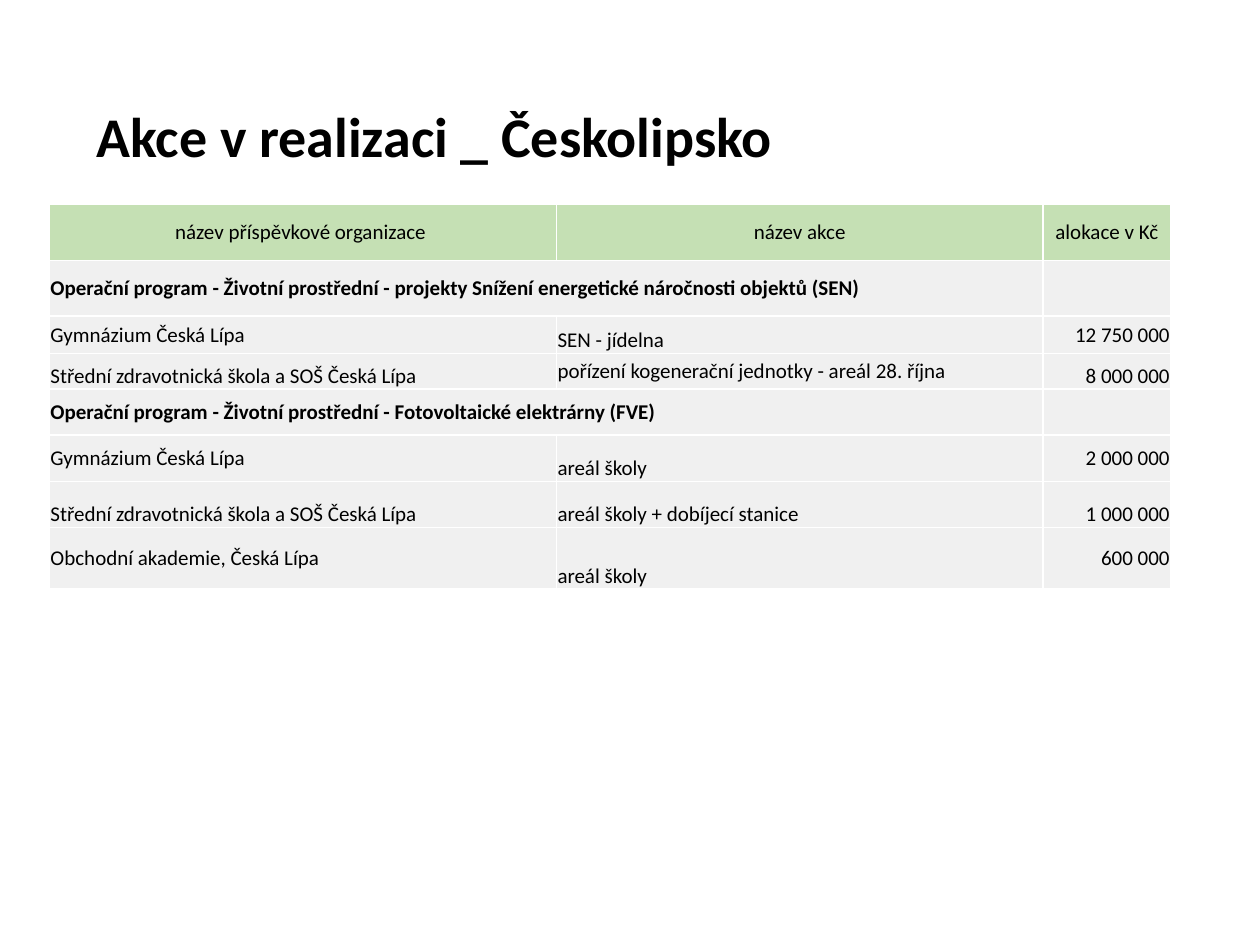
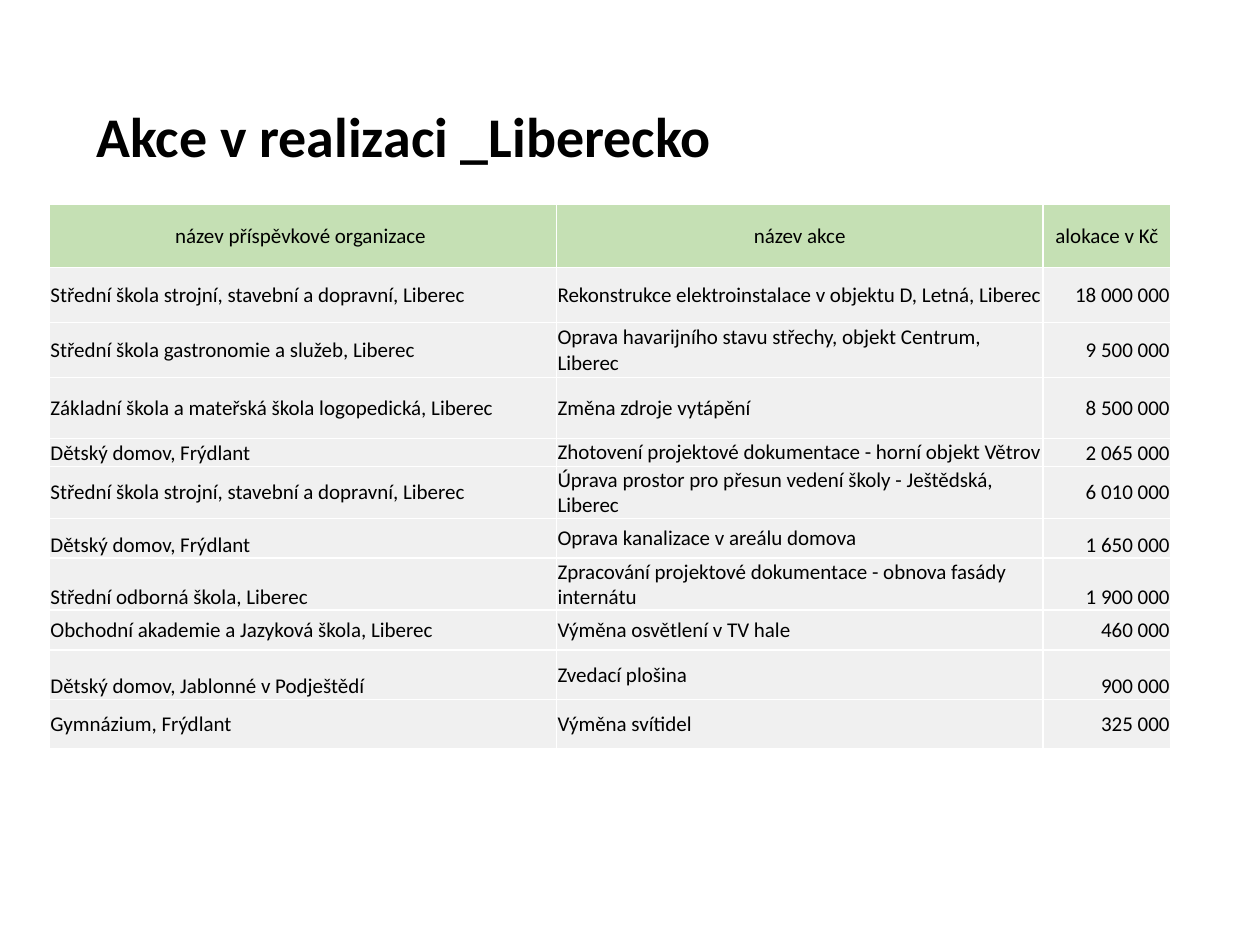
"""Build two slides listing projects under way, region by region."""
from dataclasses import dataclass

from lxml import etree
from pptx import Presentation
from pptx.dml.color import RGBColor
from pptx.enum.text import MSO_ANCHOR, MSO_AUTO_SIZE, PP_ALIGN
from pptx.oxml.ns import qn
from pptx.slide import Slide
from pptx.table import _Cell
from pptx.text.text import TextFrame
from pptx.util import Pt

LEFT, CENTER, RIGHT = PP_ALIGN.LEFT, PP_ALIGN.CENTER, PP_ALIGN.RIGHT
MIDDLE, BOTTOM = MSO_ANCHOR.MIDDLE, MSO_ANCHOR.BOTTOM
FIT_SHAPE = MSO_AUTO_SIZE.SHAPE_TO_FIT_TEXT


@dataclass(frozen=True)
class Theme:
    """Colours, type sizes and measures, in points, shared by the slides."""
    font: str = "Calibri"
    text: str = "000000"
    header_fill: str = "C5E0B4"
    body_fill: str = "F0F0F0"
    border: str = "FFFFFF"
    title_size: float = 32
    table_size: float = 12
    border_width: float = 1
    cell_inset: float = 0.6
    table_left: float = 28.25
    table_top: float = 116.75
    columns: tuple[float, ...] = (289.75, 278, 73)


THEME = Theme()


@dataclass(frozen=True)
class Project:
    """A row with an organisation, its project and the allocated sum."""
    height: float
    organisation: str
    project: str
    amount: str
    outer_anchor: MSO_ANCHOR = MIDDLE
    project_anchor: MSO_ANCHOR = MIDDLE


@dataclass(frozen=True)
class Programme:
    """A bold row whose name spans the first two columns."""
    height: float
    name: str


@dataclass(frozen=True)
class Header:
    """A row of column headings."""
    height: float
    labels: tuple[str, ...] = ("název příspěvkové organizace ", "název akce", "alokace v Kč")


Row = Header | Programme | Project


@dataclass(frozen=True)
class Region:
    """A slide title and the tables stacked below it."""
    title: str
    tables: tuple[tuple[Row, ...], ...]


CESKA_LIPA_GYMNASIUM = "Gymnázium Česká Lípa"
CESKA_LIPA_MEDICAL = "Střední zdravotnická škola a SOŠ Česká Lípa"
LIBEREC_ENGINEERING = "Střední škola strojní, stavební a dopravní, Liberec"
FRYDLANT_HOME = "Dětský domov, Frýdlant"

REGIONS = (
    Region("Akce v realizaci _ Českolipsko", (
        (
            Header(32),
            Programme(32, "Operační program - Životní prostřední - projekty "
                          "Snížení energetické náročnosti objektů (SEN)"),
            Project(21.25, CESKA_LIPA_GYMNASIUM, "SEN - jídelna", "12 750 000", MIDDLE, BOTTOM),
            Project(20.25, CESKA_LIPA_MEDICAL,
                    "pořízení kogenerační jednotky - areál 28. října", "8 000 000", BOTTOM),
        ),
        (
            Programme(26.4, "Operační program - Životní prostřední - "
                            "Fotovoltaické elektrárny (FVE)"),
            Project(26.4, CESKA_LIPA_GYMNASIUM, "areál školy", "2 000 000", MIDDLE, BOTTOM),
            Project(26.4, CESKA_LIPA_MEDICAL, "areál školy + dobíjecí stanice",
                    "1 000 000", BOTTOM, BOTTOM),
            Project(35.25, "Obchodní akademie, Česká Lípa", "areál školy",
                    "600 000", MIDDLE, BOTTOM),
        ),
    )),
    Region("Akce v realizaci _Liberecko", (
        (
            Header(36),
            Project(31.5, LIBEREC_ENGINEERING,
                    "Rekonstrukce elektroinstalace v objektu D, Letná, Liberec", "18 000 000"),
            Project(31.5, "Střední škola gastronomie a služeb, Liberec",
                    "Oprava havarijního stavu střechy, objekt Centrum, Liberec", "9 500 000"),
            Project(34.75, "Základní škola a mateřská škola logopedická, Liberec",
                    "Změna zdroje vytápění", "8 500 000"),
            Project(16, FRYDLANT_HOME,
                    "Zhotovení projektové dokumentace - horní objekt Větrov",
                    "2 065 000", BOTTOM),
            Project(29.75, LIBEREC_ENGINEERING,
                    "Úprava prostor pro přesun vedení školy - Ještědská, Liberec", "6 010 000"),
            Project(22.75, FRYDLANT_HOME, "Oprava kanalizace v areálu domova",
                    "1 650 000", BOTTOM),
            Project(29.75, "Střední odborná škola, Liberec",
                    "Zpracování projektové dokumentace - obnova fasády internátu",
                    "1 900 000", BOTTOM),
            Project(22.75, "Obchodní akademie a Jazyková škola, Liberec",
                    "Výměna osvětlení v TV hale", "460 000"),
        ),
        (
            Project(28.25, "Dětský domov, Jablonné v Podještědí", "Zvedací plošina",
                    "900 000", BOTTOM),
            Project(28.25, "Gymnázium, Frýdlant", "Výměna svítidel", "325 000"),
        ),
    )),
)


def write_text(frame: TextFrame, text: str, *, size: float, bold: bool = False,
               align: PP_ALIGN = LEFT) -> None:
    """Write one formatted paragraph into a text frame."""
    paragraph = frame.paragraphs[0]
    paragraph.alignment = align
    run = paragraph.add_run()
    run.text = text
    run.font.name = THEME.font
    run.font.size = Pt(size)
    run.font.bold = bold
    run.font.color.rgb = RGBColor.from_string(THEME.text)


def style_cell(cell: _Cell, fill: str) -> None:
    """Give a cell its insets, borders and fill."""
    cell.margin_left = cell.margin_right = cell.margin_top = Pt(THEME.cell_inset)
    cell.margin_bottom = 0
    cell.vertical_anchor = MIDDLE
    properties = cell._tc.get_or_add_tcPr()
    for side in ("lnL", "lnR", "lnT", "lnB"):
        line = etree.SubElement(properties, qn(f"a:{side}"), w=str(Pt(THEME.border_width)))
        solid = etree.SubElement(line, qn("a:solidFill"))
        etree.SubElement(solid, qn("a:srgbClr"), val=THEME.border)
    cell.fill.solid()
    cell.fill.fore_color.rgb = RGBColor.from_string(fill)


def fill_row(cells: list[_Cell], row: Row) -> None:
    """Style the cells of a row and write its content."""
    fill = THEME.header_fill if isinstance(row, Header) else THEME.body_fill
    for cell in cells:
        style_cell(cell, fill)
    if isinstance(row, Programme):
        cells[0].merge(cells[1])
        write_text(cells[0].text_frame, row.name, size=THEME.table_size, bold=True)
    elif isinstance(row, Header):
        for cell, label in zip(cells, row.labels):
            write_text(cell.text_frame, label, size=THEME.table_size, align=CENTER)
    else:
        contents = (
            (row.organisation, LEFT, row.outer_anchor),
            (row.project, LEFT, row.project_anchor),
            (row.amount, RIGHT, row.outer_anchor),
        )
        for cell, (text, align, anchor) in zip(cells, contents):
            cell.vertical_anchor = anchor
            write_text(cell.text_frame, text, size=THEME.table_size, align=align)


def add_project_table(slide: Slide, rows: tuple[Row, ...], top: float) -> float:
    """Draw a table and return the position of its bottom edge."""
    height = sum(row.height for row in rows)
    table = slide.shapes.add_table(
        len(rows), len(THEME.columns), Pt(THEME.table_left), Pt(top),
        Pt(sum(THEME.columns)), Pt(height)).table
    table.first_row = table.horz_banding = False
    for column, width in zip(table.columns, THEME.columns):
        column.width = Pt(width)
    for table_row, row in zip(table.rows, rows):
        table_row.height = Pt(row.height)
        fill_row(list(table_row.cells), row)
    return top + height


def add_title(slide: Slide, title: str) -> None:
    """Draw the slide title."""
    frame = slide.shapes.add_textbox(Pt(48), Pt(54.75), Pt(601), Pt(46)).text_frame
    frame.word_wrap = True
    frame.auto_size = FIT_SHAPE
    write_text(frame, title, size=THEME.title_size, bold=True)


def main() -> None:
    """Build and save the presentation."""
    presentation = Presentation()
    presentation.slide_width, presentation.slide_height = Pt(720), Pt(540)
    for region in REGIONS:
        slide = presentation.slides.add_slide(presentation.slide_layouts[6])
        add_title(slide, region.title)
        top = THEME.table_top
        for rows in region.tables:
            top = add_project_table(slide, rows, top)
    presentation.save("out.pptx")


if __name__ == "__main__":
    main()
